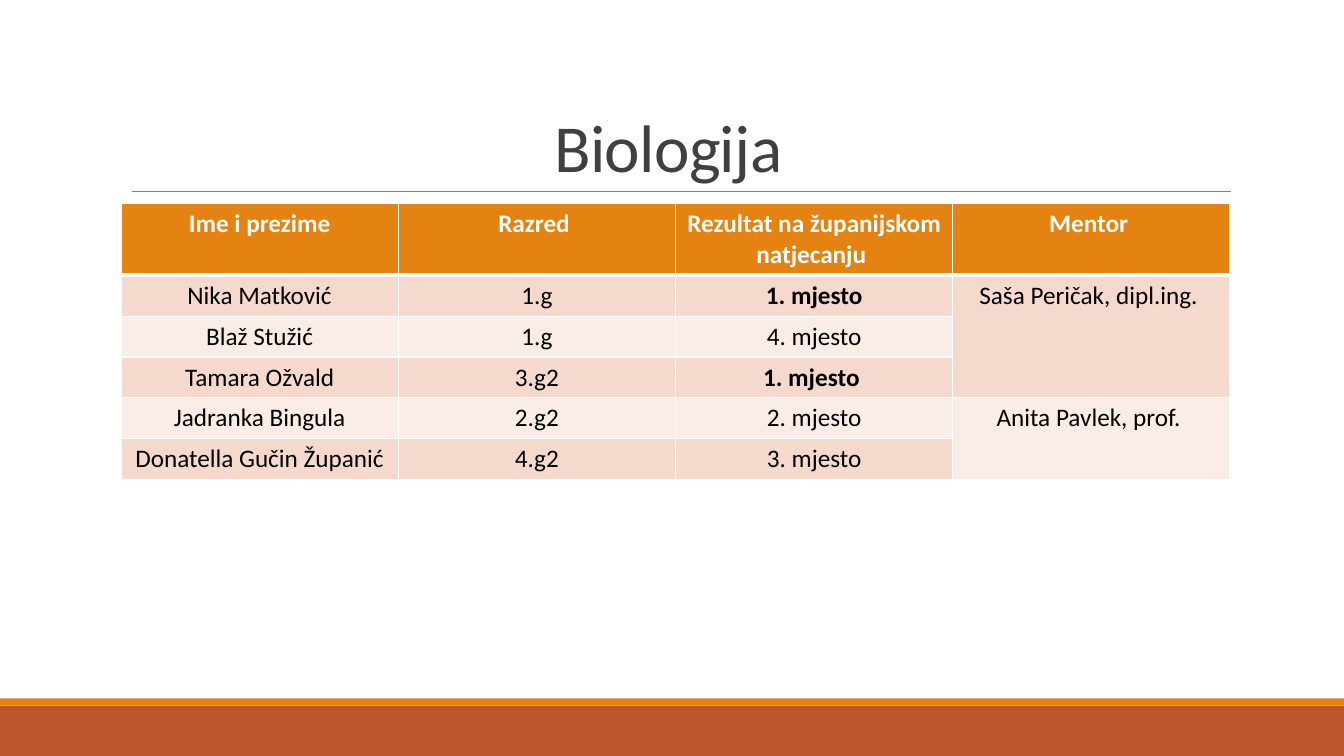
from lxml import etree
from pptx import Presentation
from pptx.dml.color import RGBColor
from pptx.enum.shapes import MSO_CONNECTOR, MSO_SHAPE
from pptx.enum.text import MSO_ANCHOR, PP_ALIGN
from pptx.oxml.ns import qn
from pptx.util import Inches, Pt

RECTANGLE = MSO_SHAPE.RECTANGLE
STRAIGHT = MSO_CONNECTOR.STRAIGHT
CENTER = PP_ALIGN.CENTER
BOTTOM = MSO_ANCHOR.BOTTOM

ORANGE = RGBColor(0xE4, 0x83, 0x12)
RUST = RGBColor(0xBD, 0x58, 0x2C)
GRAY = RGBColor(0x80, 0x80, 0x80)
DARK = RGBColor(0x40, 0x40, 0x40)
BLACK = RGBColor(0, 0, 0)
WHITE = RGBColor(0xFF, 0xFF, 0xFF)
BANDS = (RGBColor(0xF5, 0xD9, 0xCC), RGBColor(0xFA, 0xED, 0xE7))

TITLE_ONLY = 5
COLUMN_WIDTH = 2.75
HEADER_HEIGHT = 0.7
ROW_HEIGHT = 0.4

RESULTS = [
    ("Ime i prezime", "Razred ", "Rezultat na županijskom natjecanju ", "Mentor "),
    ("Nika Matković", "1.g", "1. mjesto", "Saša Peričak, dipl.ing. "),
    ("Blaž Stužić", "1.g", "4. mjesto", ""),
    ("Tamara Ožvald", "3.g2", "1. mjesto ", ""),
    ("Jadranka Bingula", "2.g2", "2. mjesto", "Anita Pavlek, prof. "),
    ("Donatella Gučin Županić", "4.g2", "3. mjesto", ""),
]
MENTOR_COLUMN = 3
MENTOR_ROWS = [(1, 3), (4, 5)]


class SlideBuilder:
    """Holds the text style and the current slide."""

    def __init__(self, slide, font_name):
        self.slide = slide
        self.font_name = font_name

    def add_run(self, paragraph, text, size, color, bold=False):
        paragraph.alignment = CENTER
        run = paragraph.add_run()
        run.text = text
        run.font.name = self.font_name
        run.font.size = Pt(size)
        run.font.bold = bold
        run.font.color.rgb = color
        return run

    def set_title(self, text, left, top, width, height):
        title = self.slide.shapes.title
        title.left, title.top = Inches(left), Inches(top)
        title.width, title.height = Inches(width), Inches(height)
        title.text_frame.vertical_anchor = BOTTOM
        paragraph = title.text_frame.paragraphs[0]
        paragraph.line_spacing = 0.85
        run = self.add_run(paragraph, text, 48, DARK)
        run.font._element.set("spc", "-50")

    def add_bar(self, top, height, color):
        bar = self.slide.shapes.add_shape(
            RECTANGLE, 0, Inches(top), Inches(13.33), Inches(height))
        bar.shadow.inherit = False
        bar.fill.solid()
        bar.fill.fore_color.rgb = color
        bar.line.fill.background()

    def add_rule(self, left, right, top):
        rule = self.slide.shapes.add_connector(
            STRAIGHT, Inches(left), Inches(top), Inches(right), Inches(top))
        rule.line.color.rgb = GRAY
        rule.line.width = Pt(0.5)
        etree.SubElement(rule._element.spPr, qn("a:effectLst"))

    def set_borders(self, cell, top_width, bottom_width):
        properties = cell._tc.get_or_add_tcPr()
        widths = {"a:lnL": 1, "a:lnR": 1, "a:lnT": top_width, "a:lnB": bottom_width}
        for tag, width in widths.items():
            border = etree.SubElement(properties, qn(tag), w=str(Pt(width)))
            fill = etree.SubElement(border, qn("a:solidFill"))
            etree.SubElement(fill, qn("a:srgbClr"), val=str(WHITE))

    def fill_cell(self, cell, text, row_index):
        is_header = row_index == 0
        self.set_borders(cell, 3 if row_index == 1 else 1, 3 if is_header else 1)
        cell.fill.solid()
        cell.fill.fore_color.rgb = ORANGE if is_header else BANDS[(row_index - 1) % 2]
        if text:
            is_bold = is_header or text.startswith("1. mjesto")
            color = WHITE if is_header else BLACK
            self.add_run(cell.text_frame.paragraphs[0], text, 18, color, is_bold)

    def add_results_table(self, left, top, rows):
        column_count = len(rows[0])
        height = HEADER_HEIGHT + ROW_HEIGHT * (len(rows) - 1)
        table = self.slide.shapes.add_table(
            len(rows), column_count, Inches(left), Inches(top),
            Inches(COLUMN_WIDTH * column_count), Inches(height)).table
        for column in table.columns:
            column.width = Inches(COLUMN_WIDTH)
        for row_index, texts in enumerate(rows):
            row_height = ROW_HEIGHT if row_index else HEADER_HEIGHT
            table.rows[row_index].height = Inches(row_height)
            for column_index, text in enumerate(texts):
                self.fill_cell(table.cell(row_index, column_index), text, row_index)
        for first, last in MENTOR_ROWS:
            table.cell(first, MENTOR_COLUMN).merge(table.cell(last, MENTOR_COLUMN))


def main():
    presentation = Presentation()
    presentation.slide_width = Inches(13.33)
    presentation.slide_height = Inches(7.5)
    slide = presentation.slides.add_slide(presentation.slide_layouts[TITLE_ONLY])
    builder = SlideBuilder(slide, "Calibri")

    # Footer bars
    builder.add_bar(7, 0.5, RUST)
    builder.add_bar(6.93, 0.07, ORANGE)

    # Title and rule
    builder.add_rule(1.31, 12.21, 1.9)
    builder.set_title("Biologija ", 1.2, 0.31, 11, 1.59)

    # Competition results
    builder.add_results_table(1.2, 2.02, RESULTS)

    presentation.save("out.pptx")


if __name__ == "__main__":
    main()
